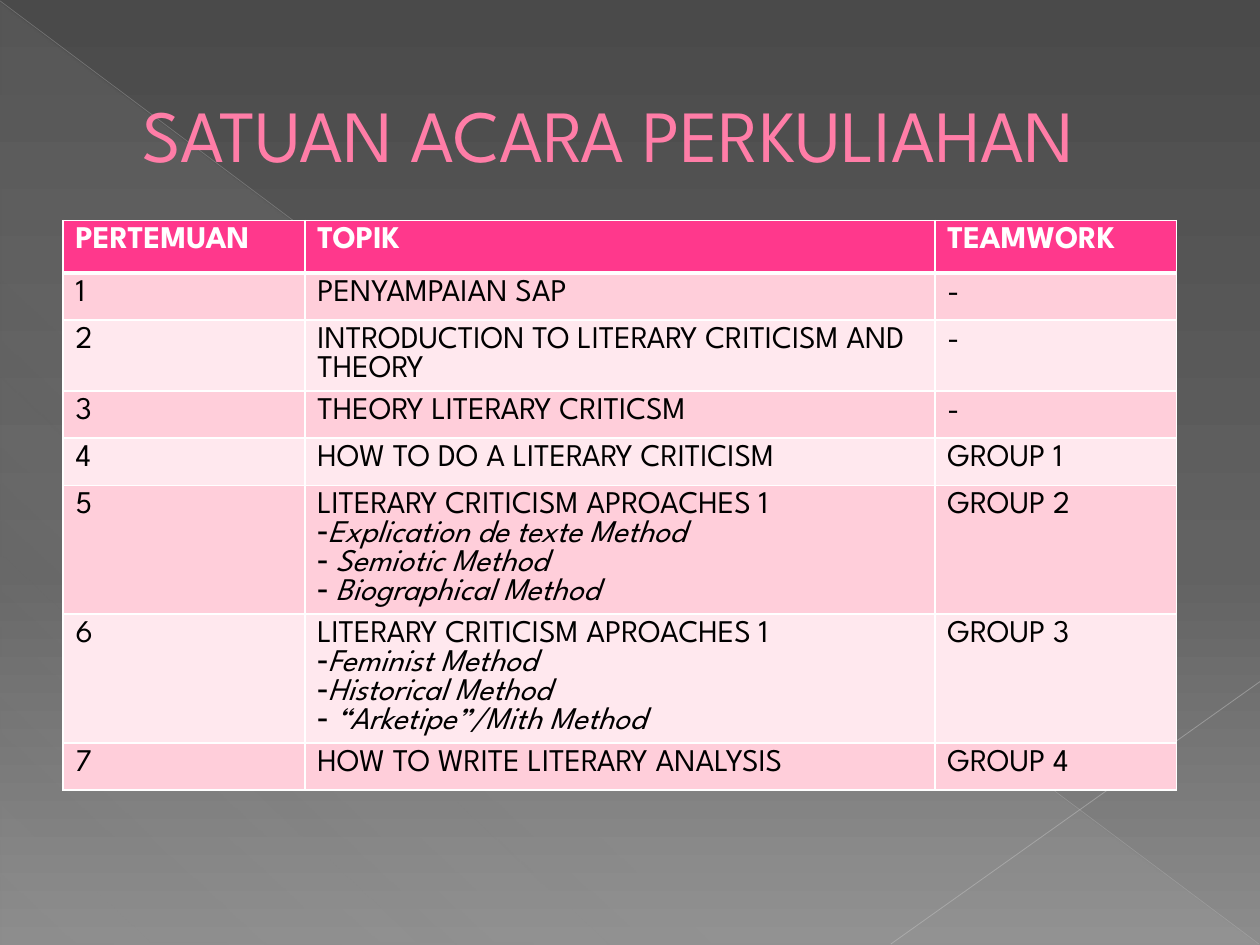
from lxml.etree import SubElement
from pptx import Presentation
from pptx.dml.color import RGBColor
from pptx.enum.shapes import MSO_CONNECTOR, MSO_SHAPE
from pptx.enum.text import MSO_ANCHOR, MSO_AUTO_SIZE, PP_ALIGN
from pptx.oxml import parse_xml
from pptx.oxml.ns import nsdecls, qn
from pptx.util import Pt

FONT = "League Spartan"
WHITE = RGBColor(0xFF, 0xFF, 0xFF)
BLACK = RGBColor(0x00, 0x00, 0x00)
TITLE_PINK = RGBColor(0xFF, 0x7D, 0xA7)
TITLE_OUTLINE = RGBColor(0xB1, 0x27, 0x61)
HEADER_PINK = RGBColor(0xFF, 0x38, 0x8C)
ROW_PINKS = (RGBColor(0xFF, 0xCE, 0xDA), RGBColor(0xFF, 0xE8, 0xEE))
SHEEN = RGBColor(0xD2, 0xD2, 0xD2)
FALLING_GREY = RGBColor(0xBF, 0xBF, 0xBF)
RISING_GREY = RGBColor(0xC6, 0xC6, 0xC6)
BACKGROUND_STOPS = (
    (0, RGBColor(0x4A, 0x4A, 0x4A), 100),
    (60, RGBColor(0x62, 0x62, 0x62), 100),
    (100, RGBColor(0x8C, 0x8C, 0x8C), 100),
)
SHEEN_STOPS = ((0, SHEEN, 10), (70, SHEEN, 8), (100, SHEEN, 1))

ROWS = [
    ("PERTEMUAN", ["TOPIK"], "TEAMWORK"),
    ("1", ["PENYAMPAIAN SAP"], "-"),
    ("2", ["INTRODUCTION TO LITERARY CRITICISM AND THEORY"], "-"),
    ("3", ["THEORY LITERARY CRITICSM"], "-"),
    ("4", ["HOW TO DO A LITERARY CRITICISM"], "GROUP 1"),
    ("5", ["LITERARY CRITICISM APROACHES 1", "Explication de texte Method",
           " Semiotic Method", " Biographical Method"], "GROUP 2"),
    ("6", ["LITERARY CRITICISM APROACHES 1", "Feminist Method",
           "Historical Method", " “Arketipe”/Mith Method"], "GROUP 3"),
    ("7", ["HOW TO WRITE LITERARY ANALYSIS"], "GROUP 4"),
]


def set_gradient(fill, stops, angle):
    fill.gradient()
    gradient = fill._fill._gradFill
    for child in list(gradient):
        gradient.remove(child)
    stop_list = SubElement(gradient, qn("a:gsLst"))
    for position, color, opacity in stops:
        stop = SubElement(stop_list, qn("a:gs"), pos=str(position * 1000))
        rgb = SubElement(stop, qn("a:srgbClr"), val=str(color))
        SubElement(rgb, qn("a:alpha"), val=str(opacity * 1000))
    SubElement(gradient, qn("a:lin"), ang=str(angle * 60000), scaled="0")


def line_xml(tag, width, color):
    return parse_xml(
        f'<a:{tag} {nsdecls("a")} w="{int(Pt(width))}"><a:solidFill>'
        f'<a:srgbClr val="{color}"/></a:solidFill></a:{tag}>'
    )


presentation = Presentation()
presentation.slide_width = Pt(720)
presentation.slide_height = Pt(540)
slide = presentation.slides.add_slide(presentation.slide_layouts[5])
set_gradient(slide.background.fill, BACKGROUND_STOPS, 90)

triangle = slide.shapes.add_shape(
    MSO_SHAPE.RIGHT_TRIANGLE, Pt(0.5), Pt(1.3), Pt(719), Pt(538.7))
triangle.shadow.inherit = False
triangle.line.fill.background()
set_gradient(triangle.fill, SHEEN_STOPS, 133)

for start_x, start_y, end_x, end_y, color, width, opacity in (
    (0, 0.5, 719.5, 539.5, FALLING_GREY, 0.39, 35),
    (720, 389.5, 509, 539.5, RISING_GREY, 0.47, 45),
):
    connector = slide.shapes.add_connector(
        MSO_CONNECTOR.STRAIGHT, Pt(start_x), Pt(start_y), Pt(end_x), Pt(end_y))
    connector.line.color.rgb = color
    connector.line.width = Pt(width)
    rgb = connector._element.spPr.find(".//" + qn("a:srgbClr"))
    SubElement(rgb, qn("a:alpha"), val=str(opacity * 1000))
    SubElement(connector._element.spPr, qn("a:effectLst"))

title = slide.shapes.title
title._element.getparent().append(title._element)
title.left, title.top, title.width, title.height = Pt(36), Pt(21), Pt(648), Pt(110)
title.text_frame.text = "SATUAN ACARA PERKULIAHAN"
title.text_frame.vertical_anchor = MSO_ANCHOR.MIDDLE
title.text_frame.auto_size = MSO_AUTO_SIZE.NONE
paragraph = title.text_frame.paragraphs[0]
paragraph.alignment = PP_ALIGN.LEFT
paragraph.font.name = FONT
paragraph.font.size = Pt(42)
paragraph.font.color.rgb = TITLE_PINK
properties = paragraph._p.get_or_add_pPr()
properties.set("marL", str(int(Pt(38))))
properties.set("indent", "0")
run_properties = paragraph.runs[0]._r.get_or_add_rPr()
run_properties.insert(0, line_xml("ln", 0.5, TITLE_OUTLINE))

table_frame = slide.shapes.add_table(
    len(ROWS), 3, Pt(36), Pt(126), Pt(636), Pt(219))
table = table_frame.table
for column, width in zip(table.columns, (138.2, 360, 138.2)):
    column.width = Pt(width)

for row_index, (meeting, topic, team) in enumerate(ROWS):
    is_header = row_index == 0
    table.rows[row_index].height = Pt(30 if is_header else 27)
    for column_index, lines in enumerate(([meeting], topic, [team])):
        cell = table.cell(row_index, column_index)
        cell.text = "\n".join(lines)
        cell.fill.solid()
        cell.fill.fore_color.rgb = (
            HEADER_PINK if is_header else ROW_PINKS[(row_index - 1) % 2])
        borders = (
            ("lnL", 1), ("lnR", 1),
            ("lnT", 3 if row_index == 1 else 1), ("lnB", 3 if is_header else 1))
        cell_properties = cell._tc.get_or_add_tcPr()
        for position, (tag, width) in enumerate(borders):
            cell_properties.insert(position, line_xml(tag, width, WHITE))
        for line_index, paragraph in enumerate(cell.text_frame.paragraphs):
            is_method = line_index > 0
            paragraph.font.name = FONT
            paragraph.font.size = Pt(18)
            paragraph.font.bold = is_header
            paragraph.font.italic = is_method
            paragraph.font.color.rgb = WHITE if is_header else BLACK
            if is_method:
                properties = paragraph._p.get_or_add_pPr()
                properties.set("marL", "0")
                properties.set("indent", "0")
                properties.insert(0, parse_xml(f'<a:buChar {nsdecls("a")} char="-"/>'))
                properties.insert(0, parse_xml(f'<a:buFontTx {nsdecls("a")}/>'))
table_frame.height = Pt(383)

presentation.save("out.pptx")
